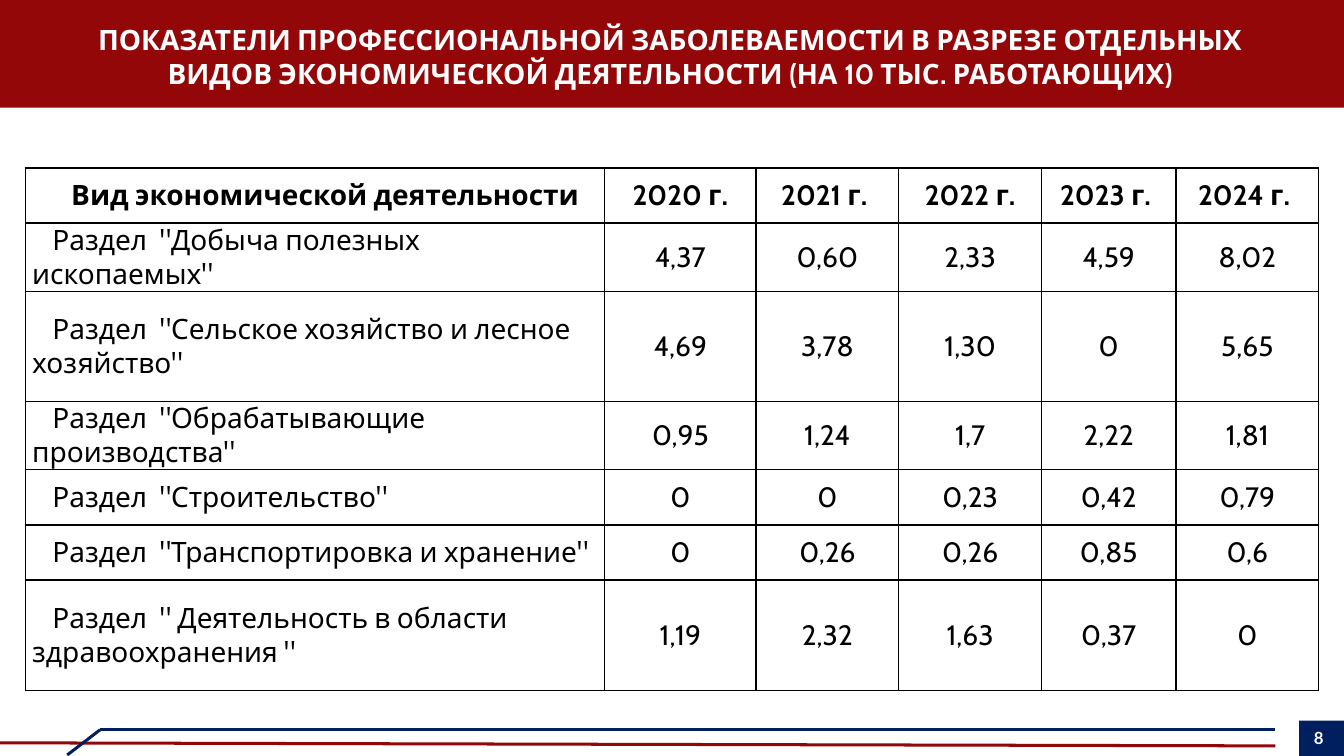
"""Build the slide on occupational disease rates by type of economic activity."""
from lxml.etree import SubElement
from pptx import Presentation
from pptx.dml.color import RGBColor
from pptx.enum.shapes import MSO_CONNECTOR, MSO_SHAPE
from pptx.enum.text import MSO_ANCHOR, MSO_AUTO_SIZE, PP_ALIGN
from pptx.oxml.ns import qn
from pptx.util import Pt

TITLE = ("ПОКАЗАТЕЛИ ПРОФЕССИОНАЛЬНОЙ ЗАБОЛЕВАЕМОСТИ В РАЗРЕЗЕ ОТДЕЛЬНЫХ "
         "ВИДОВ ЭКОНОМИЧЕСКОЙ ДЕЯТЕЛЬНОСТИ (НА 10 ТЫС. РАБОТАЮЩИХ)")
PAGE = "8"
ROWS = [
    ("Вид экономической деятельности",
     "2020 г.", "2021 г. ", "2022 г.", "2023 г. ", "2024 г. "),
    ('Раздел  "Добыча полезных  ископаемых"', "4,37", "0,60", "2,33", "4,59", "8,02"),
    ('Раздел  "Сельское хозяйство и лесное хозяйство"',
     "4,69", "3,78", "1,30", "0", "5,65"),
    ('Раздел  "Обрабатывающие производства"', "0,95", "1,24", "1,7", "2,22", "1,81"),
    ('Раздел  "Строительство"', "0", "0", "0,23", "0,42", "0,79"),
    ('Раздел  "Транспортировка и хранение"', "0", "0,26", "0,26", "0,85", "0,6"),
    ('Раздел  " Деятельность в области здравоохранения "',
     "1,19", "2,32", "1,63", "0,37", "0"),
]
COL_WIDTHS = [414, 108, 102, 102, 96, 102]
ROW_UNITS = [1, 1, 2, 1, 1, 1, 2]
ROW_UNIT = 39.36
TABLE_LEFT, TABLE_TOP = 18, 120
WIDTH, HEIGHT = 960, 540
RED, RULE_RED, NAVY, WHITE, BLACK = "930709", "920709", "001F5F", "FFFFFF", "000000"
RULES = [
    (0, 530.6, 911, 532.8, RULE_RED),
    (71.5, 521.3, 911, 521.3, NAVY),
    (48, 539.3, 71.5, 521.3, NAVY),
]


def rgb(color):
    return RGBColor.from_string(color)


def add_block(s, left, top, width, height, color):
    sp = s.shapes.add_shape(MSO_SHAPE.RECTANGLE, Pt(left), Pt(top), Pt(width), Pt(height))
    sp.shadow.inherit = False
    sp.fill.solid()
    sp.fill.fore_color.rgb = rgb(color)
    sp.line.fill.background()


def add_rule(s, x1, y1, x2, y2, color):
    line = s.shapes.add_connector(MSO_CONNECTOR.STRAIGHT, Pt(x1), Pt(y1), Pt(x2), Pt(y2))
    line.line.color.rgb = rgb(color)
    line.line.width = Pt(2.16)
    SubElement(line._element.spPr, qn("a:effectLst"))


def format_text(p, size, font, color, bold, align):
    p.alignment = align
    for r in p.runs:
        r.font.size = Pt(size)
        r.font.name = font
        r.font.bold = bold
        r.font.color.rgb = rgb(color)


def set_margins(tf, left, top, right, bottom):
    tf.margin_left, tf.margin_top = Pt(left), Pt(top)
    tf.margin_right, tf.margin_bottom = Pt(right), Pt(bottom)


def add_borders(cell):
    tc_pr = cell._tc.get_or_add_tcPr()
    for side in ("lnL", "lnR", "lnT", "lnB"):
        ln = SubElement(tc_pr, qn(f"a:{side}"), w=str(Pt(1)))
        fill = SubElement(ln, qn("a:solidFill"))
        SubElement(fill, qn("a:srgbClr"), val=BLACK)


def fill_cell(cell, text, is_header, is_label):
    cell.text_frame.text = text
    cell.vertical_anchor = MSO_ANCHOR.MIDDLE
    set_margins(cell, 5, 0, 5, 0)
    p = cell.text_frame.paragraphs[0]
    left = is_label and not is_header
    format_text(p, 20, "Cabin", BLACK, is_header, PP_ALIGN.LEFT if left else PP_ALIGN.CENTER)
    if is_label:
        p._p.get_or_add_pPr().set("indent", str(Pt(14.4)))
    add_borders(cell)
    cell.fill.background()


def add_rates_table(s):
    frame = s.shapes.add_table(len(ROWS), len(COL_WIDTHS), Pt(TABLE_LEFT), Pt(TABLE_TOP),
                               Pt(sum(COL_WIDTHS)), Pt(sum(ROW_UNITS) * ROW_UNIT))
    table = frame.table
    table.first_row = table.horz_banding = False
    for column, width in zip(table.columns, COL_WIDTHS):
        column.width = Pt(width)
    for row, units in zip(table.rows, ROW_UNITS):
        row.height = Pt(units * ROW_UNIT)
    for i, values in enumerate(ROWS):
        for j, text in enumerate(values):
            fill_cell(table.cell(i, j), text, i == 0, j == 0)


def place_title(s):
    title = s.shapes.title
    title.left, title.top, title.width, title.height = Pt(42), Pt(13), Pt(873), Pt(54)
    tf = title.text_frame
    tf.text = TITLE
    tf.word_wrap = True
    tf.auto_size = MSO_AUTO_SIZE.NONE
    tf.vertical_anchor = MSO_ANCHOR.MIDDLE
    set_margins(tf, 3, 3, 3, 3)
    format_text(tf.paragraphs[0], 20, "Cabin", WHITE, True, PP_ALIGN.CENTER)
    s.shapes._spTree.append(title._element)


def add_page_number(s):
    tf = s.shapes.add_textbox(Pt(936.5), Pt(518.4), Pt(20), Pt(16)).text_frame
    tf.text = PAGE
    tf.word_wrap = True
    set_margins(tf, 2, 1.4, 0, 0)
    p = tf.paragraphs[0]
    p.space_before = Pt(1.4)
    format_text(p, 12, "Lato", WHITE, True, PP_ALIGN.LEFT)


def main():
    prs = Presentation()
    prs.slide_width, prs.slide_height = Pt(WIDTH), Pt(HEIGHT)
    s = prs.slides.add_slide(prs.slide_layouts[5])
    add_block(s, 0, 0, WIDTH, 77, RED)
    for rule in RULES:
        add_rule(s, *rule)
    add_block(s, 928, 514.8, WIDTH - 928, HEIGHT - 514.8, NAVY)
    add_page_number(s)
    place_title(s)
    add_rates_table(s)
    prs.save("out.pptx")


if __name__ == "__main__":
    main()
